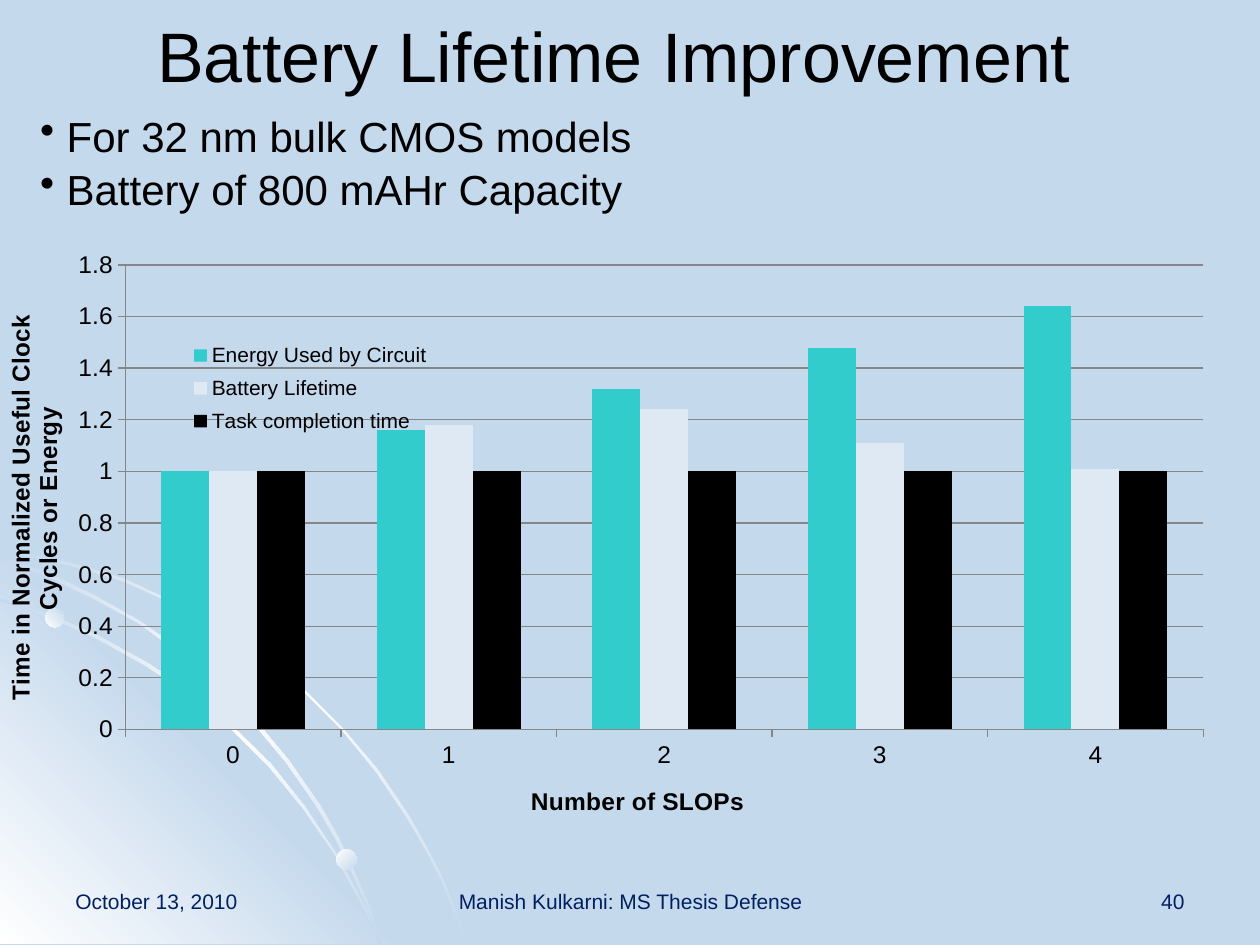
from copy import deepcopy
from dataclasses import dataclass
from lxml.etree import SubElement as Sub, Element
from pptx import Presentation
from pptx.chart.data import CategoryChartData as Data
from pptx.dml.color import RGBColor as RGB
from pptx.enum.chart import XL_CHART_TYPE as Kind, XL_LEGEND_POSITION as Spot, XL_TICK_MARK as Tick
from pptx.enum.shapes import MSO_SHAPE as Form
from pptx.enum.text import PP_ALIGN as Align
from pptx.oxml.ns import qn
from pptx.util import Cm, Pt


@dataclass
class Theme:
    font: str = "Arial"
    sky: RGB = RGB(0xC5, 0xD9, 0xED)
    white: RGB = RGB(0xFF, 0xFF, 0xFF)
    black: RGB = RGB(0, 0, 0)
    navy: RGB = RGB(0, 0x20, 0x60)
    teal: RGB = RGB(0x33, 0xCC, 0xCC)
    pale: RGB = RGB(0xDF, 0xE9, 0xF4)
    grid: RGB = RGB(0x86, 0x86, 0x86)
    head: Pt = Pt(40)
    body: Pt = Pt(24)
    axis: Pt = Pt(14)
    small: Pt = Pt(12)


look = Theme()


def shade(shape, tones, angle):
    shape.shadow.inherit = False
    shape.line.fill.background()
    fill = shape.fill
    fill.gradient()
    fill.gradient_angle = angle
    stops = shape._element.spPr.find(".//" + qn("a:gsLst"))
    while len(stops) < len(tones):
        stops.append(deepcopy(stops[-1]))
    for i, (stop, tone) in enumerate(zip(fill.gradient_stops, tones)):
        stop.color.rgb = tone
        stop.position = i / (len(tones) - 1)


def write(box, text, size, color, align=Align.LEFT):
    frame = slide.shapes.add_textbox(*map(Cm, box)).text_frame
    frame.word_wrap = True
    frame.text = text
    for para in frame.paragraphs:
        para.alignment = align
        font = para.runs[0].font
        font.name, font.size, font.color.rgb = look.font, size, color
    return frame


deck = Presentation()
deck.slide_width, deck.slide_height = Cm(25.4), Cm(19.05)
slide = deck.slides.add_slide(deck.slide_layouts[6])
slide.background.fill.solid()
slide.background.fill.fore_color.rgb = look.sky

glow = [look.sky, look.white, look.sky]
fade = [look.white, look.sky, look.white]
outer = [(57, 447), (28, 441), (0, 435), (0, 438), (28, 443), (56, 449), (97, 461),
         (135, 478), (173, 499), (208, 523), (241, 549), (271, 579), (298, 612),
         (323, 649), (337, 673), (350, 698), (360, 723), (370, 749), (372, 749),
         (362, 723), (352, 698), (339, 673), (325, 648), (300, 611), (272, 578),
         (242, 548), (209, 521), (174, 497), (136, 477), (98, 459)]
wedge = [(322, 749), (0, 749), (0, 427)]
inner = [(285, 714), (294, 732), (301, 749), (303, 749), (296, 730), (286, 712),
         (266, 676), (242, 640), (215, 606), (184, 576), (152, 549), (117, 526),
         (79, 505), (41, 488), (0, 475), (0, 477), (39, 490), (77, 507), (115, 528),
         (150, 551), (183, 578), (213, 608), (240, 641), (265, 677)]
middle = [(0, 442), (0, 444), (36, 457), (74, 475), (109, 494), (142, 518), (173, 544),
          (202, 575), (227, 605), (252, 641), (267, 667), (280, 694), (292, 722),
          (301, 749), (303, 749), (294, 720), (282, 693), (269, 665), (254, 639),
          (229, 603), (204, 573), (175, 543), (144, 516), (111, 493), (76, 473), (39, 455)]
for points, tones, angle in [(outer, glow, 315), (wedge, fade, 45),
                             (inner, glow, 315), (middle, glow, 315)]:
    path = slide.shapes.build_freeform(*points[0], scale=Cm(2.54) / 100)
    path.add_line_segments(points[1:], close=True)
    shade(path.convert_to_shape(), tones, angle)

for x, y, size, angle in [(0.91, 12.27, 0.38, 45), (6.78, 17.12, 0.41, 315),
                          (3.48, 12.01, 0.53, 45)]:
    dot = slide.shapes.add_shape(Form.OVAL, Cm(x), Cm(y), Cm(size), Cm(size))
    shade(dot, fade[:2], angle)

for x, width, text, align in [
        (1.27, 5.92, "October 13, 2010", Align.LEFT),
        (8.69, 8.05, "Manish Kulkarni: MS Thesis Defense", Align.CENTER),
        (18.21, 5.92, "40", Align.RIGHT)]:
    write((x, 17.78, width, 1.27), text, look.small, look.navy, align)

title = write((1.14, 0, 22.86, 2.36), "Battery Lifetime Improvement ",
              look.head, look.black, Align.CENTER)
title.margin_top = Cm(0.25)

facts = write((0.56, 2.06, 23.52, 2.31),
              " For 32 nm bulk CMOS models\n Battery of 800 mAHr Capacity",
              look.body, look.black)
for para in facts.paragraphs:
    para.line_spacing = 1.05
    Sub(para._p.get_or_add_pPr(), qn("a:buChar")).set("char", "•")

data = Data()
data.categories = ["0", "1", "2", "3", "4"]
data.add_series("Energy Used by Circuit ", [1, 1.16, 1.32, 1.48, 1.64])
data.add_series("Battery Lifetime", [1, 1.18, 1.24, 1.11, 1.01])
data.add_series("Task completion time", [1] * 5)
chart = slide.shapes.add_chart(Kind.COLUMN_CLUSTERED, Cm(0), Cm(4.88),
                               Cm(25.27), Cm(11.71), data).chart
chart.has_title = False
chart.font.name, chart.font.size = look.font, look.axis
chart.font.color.rgb = look.black
plot = chart.plots[0]
plot.gap_width, plot.overlap, plot.vary_by_categories = 150, 0, False
for series, tone in zip(plot.series, [look.teal, look.pale, look.black]):
    series.format.fill.solid()
    series.format.fill.fore_color.rgb = tone

cat, val = chart.category_axis, chart.value_axis
for axis, text in [(cat, "Number of SLOPs"),
                   (val, "Time in Normalized Useful Clock Cycles or Energy")]:
    axis.major_tick_mark = Tick.OUTSIDE
    axis.tick_labels.font.size = look.axis
    axis.format.line.color.rgb = look.grid
    frame = axis.axis_title.text_frame
    frame.text = text
    font = frame.paragraphs[0].runs[0].font
    font.name, font.size, font.bold = look.font, look.axis, True
    font.color.rgb = look.black
turn = val.axis_title.text_frame._txBody.bodyPr
turn.set("rot", "-5400000")
turn.set("vert", "horz")
val.minimum_scale, val.maximum_scale, val.major_unit = 0, 1.8, 0.2
val.has_major_gridlines = True
val.major_gridlines.format.line.color.rgb = look.grid

chart.has_legend = True
key = chart.legend
key.position, key.include_in_layout = Spot.RIGHT, True
key.font.name, key.font.size = look.font, look.small
key.font.color.rgb = look.black

area = chart._chartSpace.chart.plotArea
for part, place, sizes in [(area, 0, (0.1, 0.04, 0.86, 0.81)),
                           (key._element, 1, (0.14, 0.16, 0.22, 0.19)),
                           (cat.axis_title._element, 1, (0.42, 0.94))]:
    for old in part.findall(qn("c:layout")):
        part.remove(old)
    layout = Element(qn("c:layout"))
    part.insert(place, layout)
    manual = Sub(layout, qn("c:manualLayout"))
    if part is area:
        Sub(manual, qn("c:layoutTarget")).set("val", "inner")
    for mode in ("xMode", "yMode"):
        Sub(manual, qn("c:" + mode)).set("val", "edge")
    for name, size in zip("xywh", sizes):
        Sub(manual, qn("c:" + name)).set("val", str(size))

deck.save("out.pptx")
